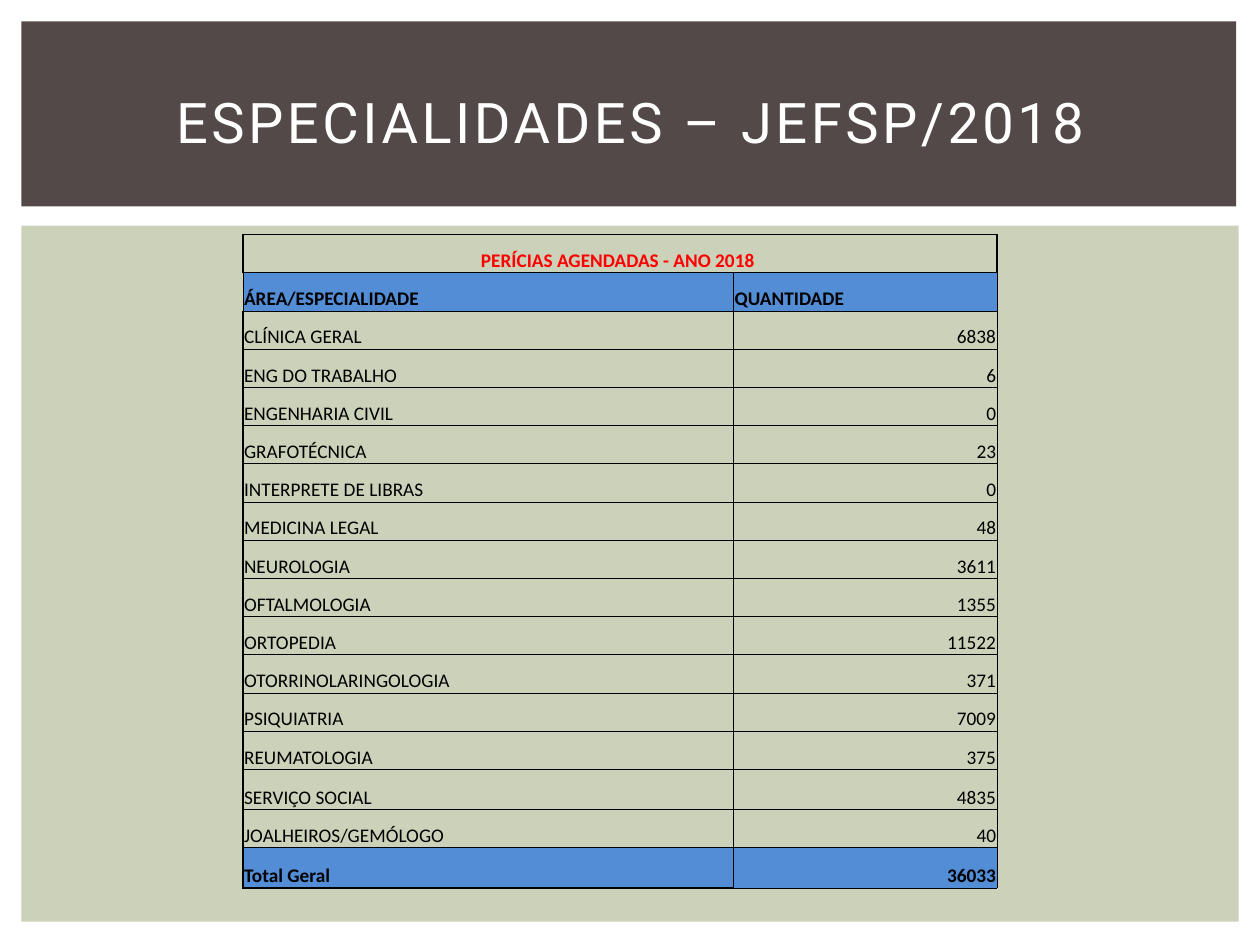
"""Build the slide of medical exam bookings by specialty."""
from dataclasses import dataclass

from lxml import etree
from pptx import Presentation
from pptx.dml.color import RGBColor
from pptx.enum.shapes import MSO_SHAPE
from pptx.enum.text import MSO_ANCHOR, PP_ALIGN
from pptx.oxml.ns import qn
from pptx.util import Cm, Pt

RECT = MSO_SHAPE.RECTANGLE
MIDDLE, BOTTOM = MSO_ANCHOR.MIDDLE, MSO_ANCHOR.BOTTOM
LEFT, CENTER, RIGHT = PP_ALIGN.LEFT, PP_ALIGN.CENTER, PP_ALIGN.RIGHT

WHITE = RGBColor(0xFF, 0xFF, 0xFF)
BLACK = RGBColor(0, 0, 0)
RED = RGBColor(0xFF, 0, 0)
BROWN = RGBColor(0x53, 0x49, 0x49)
SAGE = RGBColor(0xCC, 0xD1, 0xB9)
BLUE = RGBColor(0x53, 0x8D, 0xD5)

THIN, THICK = 0.5, 1
HEAD = ("ÁREA/ESPECIALIDADE", "QUANTIDADE")
DATA = [
    ("CLÍNICA GERAL", 6838),
    ("ENG DO TRABALHO", 6),
    ("ENGENHARIA CIVIL", 0),
    ("GRAFOTÉCNICA", 23),
    ("INTERPRETE DE LIBRAS", 0),
    ("MEDICINA LEGAL", 48),
    ("NEUROLOGIA", 3611),
    ("OFTALMOLOGIA", 1355),
    ("ORTOPEDIA", 11522),
    ("OTORRINOLARINGOLOGIA", 371),
    ("PSIQUIATRIA", 7009),
    ("REUMATOLOGIA", 375),
    ("SERVIÇO SOCIAL", 4835),
    ("JOALHEIROS/GEMÓLOGO", 40),
]
TOTAL = ("Total Geral", 36033)


@dataclass
class Panel:
    left: float
    top: float
    width: float
    height: float
    color: RGBColor


PANELS = [
    Panel(0.43, 4.55, 24.54, 14.03, SAGE),
    Panel(0.43, 0.43, 24.49, 3.73, BROWN),
]


def write(frame, text: str, *, font="Calibri", size=11, color=BLACK,
          bold=False, align=LEFT, space=0) -> None:
    """Put one formatted line of text in a frame."""
    line = frame.paragraphs[0]
    line.alignment = align
    run = line.add_run()
    run.text = text
    run.font.name, run.font.size, run.font.bold = font, Pt(size), bold
    run.font.color.rgb = color
    if space:
        run.font._element.set("spc", str(space * 100))


def draw(slide, panel: Panel) -> None:
    """Draw a plain coloured panel."""
    shape = slide.shapes.add_shape(RECT, Cm(panel.left), Cm(panel.top),
                                   Cm(panel.width), Cm(panel.height))
    shape.shadow.inherit = False
    shape.fill.solid()
    shape.fill.fore_color.rgb = panel.color
    shape.line.fill.background()


def style(cell, fill=None, left=THIN, right=THIN, top=THIN, base=THIN) -> None:
    """Set the margins, borders and fill of a cell."""
    cell.margin_left = cell.margin_right = cell.margin_top = Cm(0.02)
    cell.margin_bottom = 0
    cell.vertical_anchor = BOTTOM
    props = cell._tc.get_or_add_tcPr()
    for side, width in zip("LRTB", (left, right, top, base)):
        edge = etree.SubElement(props, qn(f"a:ln{side}"), w=str(Pt(width)))
        paint = etree.SubElement(edge, qn("a:solidFill"))
        etree.SubElement(paint, qn("a:srgbClr"), val=str(BLACK))
    if fill is None:
        cell.fill.background()
    else:
        cell.fill.solid()
        cell.fill.fore_color.rgb = fill


def tabulate(slide) -> None:
    """Add the table of bookings."""
    rows = [HEAD, *DATA, TOTAL]
    count = len(rows) + 1
    table = slide.shapes.add_table(count, 2, Cm(4.9), Cm(4.73),
                                   Cm(15.2), Cm(13.2)).table
    table.first_row = table.horz_banding = False
    table.columns[0].width, table.columns[1].width = Cm(9.89), Cm(5.31)
    for num, row in enumerate(table.rows):
        row.height = Cm(0.81 if num in (count - 3, count - 1) else 0.77)

    first, last = table.cell(0, 0), table.cell(0, 1)
    first.merge(last)
    for cell in (first, last):
        style(cell, left=THICK, right=THICK, top=THICK)
    write(first.text_frame, "PERÍCIAS AGENDADAS - ANO 2018 ",
          color=RED, bold=True, align=CENTER)

    for num, row in enumerate(rows, 1):
        strong = row in (HEAD, TOTAL)
        for col, value in enumerate(row):
            cell = table.cell(num, col)
            style(cell, fill=BLUE if strong else None,
                  left=THICK if col == 0 and row != HEAD else THIN,
                  base=THICK if col == 0 and row == TOTAL else THIN)
            write(cell.text_frame, str(value), bold=strong,
                  align=RIGHT if isinstance(value, int) else LEFT)


def main() -> None:
    """Build and save the slide."""
    deck = Presentation()
    deck.slide_width, deck.slide_height = Cm(25.4), Cm(19.05)
    slide = deck.slides.add_slide(deck.slide_layouts[5])
    for panel in PANELS:
        draw(slide, panel)
    tabulate(slide)

    title = slide.shapes.title
    title.left, title.top = Cm(1.07), Cm(0.99)
    title.width, title.height = Cm(23.29), Cm(2.92)
    title.text_frame.vertical_anchor = MIDDLE
    write(title.text_frame, "ESPECIALIDADES – JEFSP/2018", font="Roboto",
          size=32, color=WHITE, align=CENTER, space=2)
    title.element.getparent().append(title.element)
    deck.save("out.pptx")


if __name__ == "__main__":
    main()
